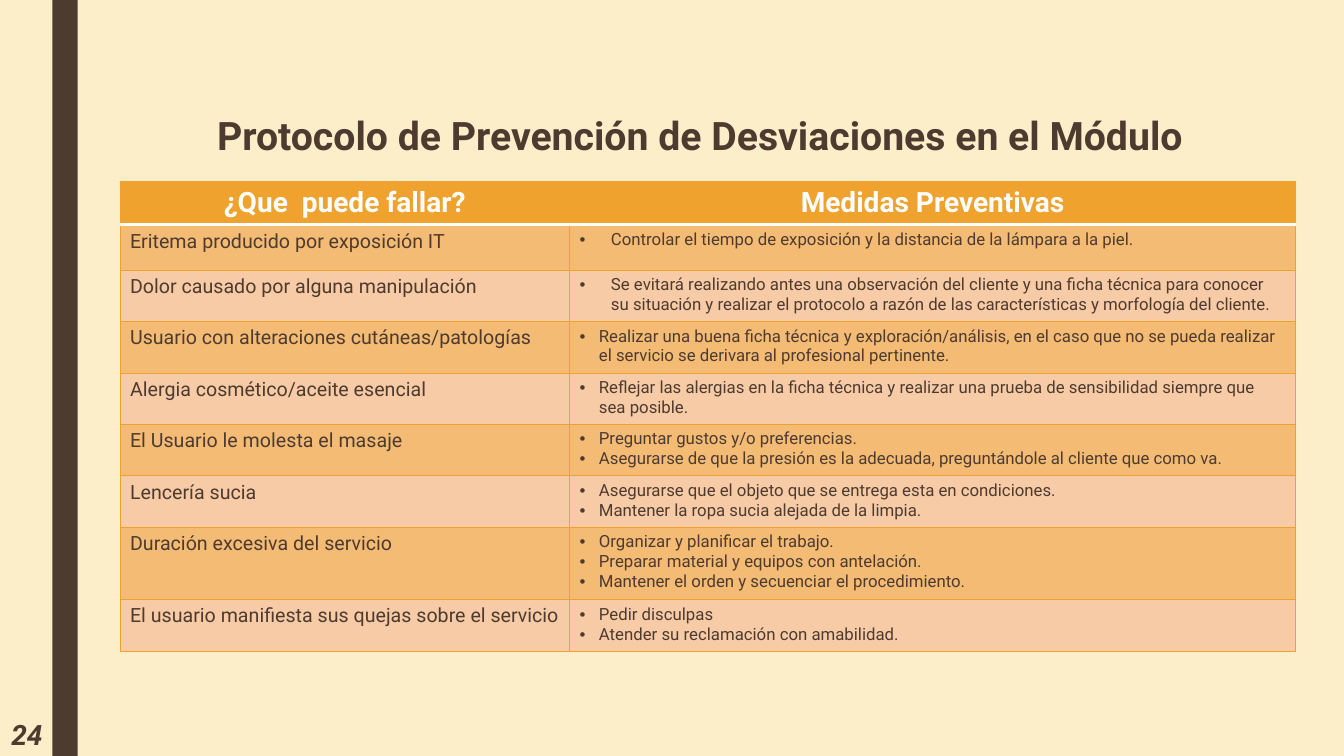
"""Build the slide on preventing deviations in the module, with its table of measures."""
from dataclasses import dataclass

from lxml.etree import SubElement
from pptx import Presentation
from pptx.dml.color import RGBColor
from pptx.enum.shapes import MSO_SHAPE as Shape
from pptx.enum.text import MSO_ANCHOR as Anchor, PP_ALIGN as Align
from pptx.oxml.ns import qn
from pptx.util import Inches, Pt


@dataclass(frozen=True)
class Theme:
    font: str = "Roboto"
    paper: str = "FBEEC9"
    brown: str = "4E3B30"
    orange: str = "F0A22E"
    dark_band: str = "F4BB74"
    light_band: str = "F7CBA5"
    white: str = "FFFFFF"
    title_size: int = 28
    header_size: int = 20
    problem_size: int = 14
    measure_size: int = 12


theme = Theme()


def write(para, text, size, color=theme.brown, bold=False, italic=False, align=Align.LEFT, indent=0):
    para.alignment = align
    span = para.add_run()
    span.text = text
    span.font.name = theme.font
    span.font.size = Pt(size)
    span.font.bold = bold
    span.font.italic = italic
    span.font.color.rgb = RGBColor.from_string(color)
    if indent:
        properties = para._p.get_or_add_pPr()
        properties.set("marL", str(Inches(indent)))
        properties.set("indent", str(-Inches(indent)))
        SubElement(properties, qn("a:buFont"), typeface="Arial")
        SubElement(properties, qn("a:buChar"), char="•")


def add_border(cell, side, color, width):
    line = SubElement(cell._tc.get_or_add_tcPr(), qn(f"a:ln{side}"), w=str(Pt(width)))
    fill = SubElement(line, qn("a:solidFill"))
    SubElement(fill, qn("a:srgbClr"), val=color)


headers = ["¿Que  puede fallar?", "Medidas Preventivas"]
risks = [
    ("Eritema producido por exposición IT", 0.45, 0.31,
     ["Controlar el tiempo de exposición y la distancia de la lámpara a la piel."]),
    ("Dolor causado por alguna manipulación", 0.51, 0.31,
     ["Se evitará realizando antes una observación del cliente y una ficha técnica para conocer "
      "su situación y realizar el protocolo a razón de las características y morfología del cliente."]),
    ("Usuario con alteraciones cutáneas/patologías", 0.51, 0.19,
     ["Realizar una buena ficha técnica y exploración/análisis, en el caso que no se pueda realizar "
      "el servicio se derivara al profesional pertinente."]),
    ("Alergia cosmético/aceite esencial", 0.51, 0.19,
     ["Reflejar las alergias en la ficha técnica y realizar una prueba de sensibilidad siempre que "
      "sea posible."]),
    ("El Usuario le molesta el masaje", 0.51, 0.19,
     ["Preguntar gustos y/o preferencias.",
      "Asegurarse de que la presión es la adecuada, preguntándole al cliente que como va."]),
    ("Lencería sucia", 0.51, 0.19,
     ["Asegurarse que el objeto que se entrega esta en condiciones.",
      "Mantener la ropa sucia alejada de la limpia."]),
    ("Duración excesiva del servicio", 0.72, 0.19,
     ["Organizar y planificar el trabajo.",
      "Preparar material y equipos con antelación.",
      "Mantener el orden y secuenciar el procedimiento."]),
    ("El usuario manifiesta sus quejas sobre el servicio", 0.51, 0.19,
     ["Pedir disculpas", "Atender su reclamación con amabilidad."]),
]

deck = Presentation()
deck.slide_width, deck.slide_height = Inches(13.33), Inches(7.5)
page = deck.slides.add_slide(deck.slide_layouts[5])
page.background.fill.solid()
page.background.fill.fore_color.rgb = RGBColor.from_string(theme.paper)

stripe = page.shapes.add_shape(Shape.RECTANGLE, Inches(0.52), 0, Inches(0.25), deck.slide_height)
stripe.shadow.inherit = False
stripe.fill.solid()
stripe.fill.fore_color.rgb = RGBColor.from_string(theme.brown)
stripe.line.fill.background()

title = page.shapes.title
title.left, title.top, title.width, title.height = map(Inches, (1.48, 0.82, 10.92, 0.8))
title.text_frame.vertical_anchor = Anchor.BOTTOM
heading = title.text_frame.paragraphs[0]
heading.line_spacing = 1.5
write(heading, "Protocolo de Prevención de Desviaciones en el Módulo", theme.title_size,
      bold=True, align=Align.CENTER)

row_heights = [0.43] + [height for _, height, _, _ in risks]
frame = page.shapes.add_table(len(row_heights), len(headers), Inches(1.19), Inches(1.8),
                              Inches(11.66), Inches(sum(row_heights)))
table = frame.table
for column, width in zip(table.columns, (4.46, 7.2)):
    column.width = Inches(width)
for row, height in zip(table.rows, row_heights):
    row.height = Inches(height)

for cell, text in zip(table.rows[0].cells, headers):
    write(cell.text_frame.paragraphs[0], text, theme.header_size, theme.white,
          bold=True, align=Align.CENTER)

for number, (problem, _, indent, measures) in enumerate(risks, 1):
    write(table.cell(number, 0).text_frame.paragraphs[0], problem, theme.problem_size)
    measure_text = table.cell(number, 1).text_frame
    for index, measure in enumerate(measures):
        para = measure_text.add_paragraph() if index else measure_text.paragraphs[0]
        write(para, measure, theme.measure_size, indent=indent)

for number, row in enumerate(table.rows):
    band = theme.dark_band if number % 2 else theme.light_band
    for cell in row.cells:
        for side in "LRTB":
            under_header = (number, side) in ((0, "B"), (1, "T"))
            add_border(cell, side, theme.white if under_header else theme.orange,
                       2.75 if under_header else 0.5)
        cell.fill.solid()
        cell.fill.fore_color.rgb = RGBColor.from_string(band if number else theme.orange)

page_number = page.shapes.add_textbox(0, Inches(7.06), Inches(0.52), Inches(0.44))
page_number.text_frame.word_wrap = True
page_number.text_frame.vertical_anchor = Anchor.MIDDLE
write(page_number.text_frame.paragraphs[0], "24", theme.header_size,
      bold=True, italic=True, align=Align.RIGHT)

deck.save("out.pptx")
